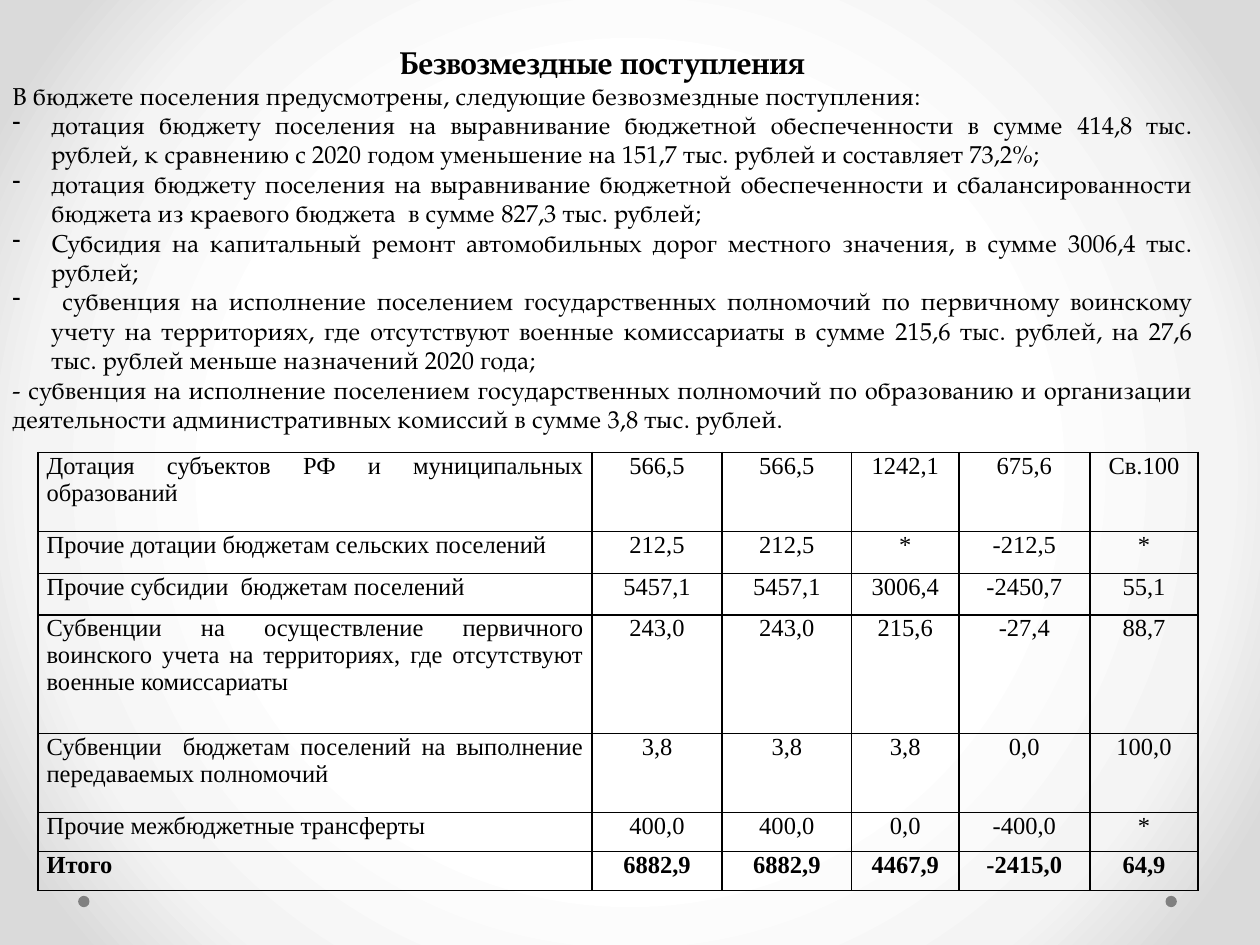
from lxml.etree import SubElement
from pptx import Presentation
from pptx.dml.color import RGBColor
from pptx.enum.shapes import MSO_SHAPE
from pptx.enum.text import MSO_AUTO_SIZE, PP_ALIGN
from pptx.oxml import parse_xml
from pptx.oxml.ns import nsdecls, qn
from pptx.util import Inches, Pt

SERIF = "TeX Gyre Pagella"
ROMAN = "Times New Roman"
TITLE = "Безвозмездные поступления"
INTRO = "В бюджете поселения предусмотрены, следующие безвозмездные поступления:"
ITEMS = [
    "дотация бюджету поселения на выравнивание бюджетной обеспеченности в сумме 414,8 тыс. рублей, "
    "к сравнению с 2020 годом уменьшение на 151,7 тыс. рублей и составляет 73,2%;",
    "дотация бюджету поселения на выравнивание бюджетной обеспеченности и сбалансированности "
    "бюджета из краевого бюджета  в сумме 827,3 тыс. рублей;",
    "Субсидия на капитальный ремонт автомобильных дорог местного значения, в сумме 3006,4 тыс. рублей;",
    " субвенция на исполнение поселением государственных полномочий по первичному воинскому учету "
    "на территориях, где отсутствуют военные комиссариаты в сумме 215,6 тыс. рублей, "
    "на 27,6 тыс. рублей меньше назначений 2020 года;",
]
LAST = (
    "- субвенция на исполнение поселением государственных полномочий по образованию и организации "
    "деятельности административных комиссий в сумме 3,8 тыс. рублей."
)
COLS = [4.4, 1.03, 1.03, 0.85, 1.04, 0.86]
HEIGHTS = [0.63, 0.33, 0.33, 0.94, 0.63, 0.31, 0.31]
ROWS = [
    ["Дотация субъектов РФ и муниципальных образований", "566,5", "566,5", "1242,1", "675,6", "Св.100"],
    ["Прочие дотации бюджетам сельских поселений", "212,5", "212,5", "*", "-212,5", "*"],
    ["Прочие субсидии  бюджетам поселений", "5457,1", "5457,1", "3006,4", "-2450,7", "55,1"],
    ["Субвенции на осуществление первичного воинского учета на территориях, где отсутствуют "
     "военные комиссариаты", "243,0", "243,0", "215,6", "-27,4", "88,7"],
    ["Субвенции  бюджетам поселений на выполнение передаваемых полномочий",
     "3,8", "3,8", "3,8", "0,0", "100,0"],
    ["Прочие межбюджетные трансферты", "400,0", "400,0", "0,0", "-400,0", "*"],
    ["Итого", "6882,9", "6882,9", "4467,9", "-2415,0", "64,9"],
]


def color(code):
    """Turn a hex string into a colour."""
    return RGBColor.from_string(code)


def style(para, text, face, align, size=14, bold=False):
    """Fill a paragraph and set its font and alignment."""
    para.text = text
    para.alignment = align
    font = para.font
    font.name, font.size, font.bold = face, Pt(size), bold
    font.color.rgb = color("000000")


def paint(slide):
    """Give the slide a round gradient background."""
    stops = "".join(
        f'<a:gs pos="{pos}000"><a:srgbClr val="{code}"/></a:gs>'
        for pos, code in [(50, "FFFFFF"), (76, "F4F4F4"), (92, "DADADA")]
    )
    slide.element.cSld.insert(0, parse_xml(
        f'<p:bg {nsdecls("p", "a")}><p:bgPr><a:gradFill rotWithShape="1"><a:gsLst>{stops}</a:gsLst>'
        '<a:path path="circle"><a:fillToRect l="50000" t="50000" r="50000" b="50000"/></a:path>'
        "</a:gradFill><a:effectLst/></p:bgPr></p:bg>"
    ))


def add_dot(slide, left):
    """Draw one grey dot near the bottom edge."""
    dot = slide.shapes.add_shape(
        MSO_SHAPE.OVAL, Inches(left), Inches(7.11), Inches(0.09), Inches(0.09)
    )
    dot.shadow.inherit = False
    dot.fill.solid()
    dot.fill.fore_color.rgb = color("808080")
    dot.line.fill.background()


def add_dash(para):
    """Give a paragraph a hanging dash."""
    props = para._p.get_or_add_pPr()
    props.set("marL", str(Inches(0.31)))
    props.set("indent", str(-Inches(0.31)))
    SubElement(props, qn("a:buFontTx"))
    SubElement(props, qn("a:buChar")).set("char", "-")


def add_body(slide):
    """Add the title and the list of receipts."""
    box = slide.shapes.add_textbox(Inches(0), Inches(0.29), Inches(9.8), Inches(3.23))
    frame = box.text_frame
    frame.word_wrap = True
    frame.auto_size = MSO_AUTO_SIZE.SHAPE_TO_FIT_TEXT
    head = frame.paragraphs[0]
    head._p.get_or_add_pPr().set("marR", str(Inches(0.24)))
    style(head, TITLE, SERIF, PP_ALIGN.CENTER, 18, True)
    for text in [INTRO, *ITEMS, LAST]:
        para = frame.add_paragraph()
        if text in ITEMS:
            add_dash(para)
        style(para, text, SERIF, PP_ALIGN.JUSTIFY)


def add_edges(cell):
    """Draw thin black borders around a cell."""
    props = cell._tc.get_or_add_tcPr()
    for side in "LRTB":
        props.append(parse_xml(
            f'<a:ln{side} {nsdecls("a")} w="{Pt(1)}"><a:solidFill><a:srgbClr val="000000"/>'
            f"</a:solidFill></a:ln{side}>"
        ))


def add_grid(slide):
    """Add the table of receipts."""
    table = slide.shapes.add_table(
        len(ROWS), len(COLS), Inches(0.3), Inches(3.59), Inches(sum(COLS)), Inches(sum(HEIGHTS))
    ).table
    table.first_row = table.horz_banding = False
    for col, width in zip(table.columns, COLS):
        col.width = Inches(width)
    for row, height, texts in zip(table.rows, HEIGHTS, ROWS):
        row.height = Inches(height)
        for num, (cell, text) in enumerate(zip(row.cells, texts)):
            cell.margin_left = cell.margin_right = Inches(0.07)
            cell.margin_top = cell.margin_bottom = 0
            add_edges(cell)
            cell.fill.background()
            align = PP_ALIGN.CENTER if num else PP_ALIGN.JUSTIFY
            style(cell.text_frame.paragraphs[0], text, ROMAN, align, bold=texts is ROWS[-1])


def main():
    """Build and save the slide."""
    deck = Presentation()
    deck.slide_width, deck.slide_height = Inches(10), Inches(7.5)
    slide = deck.slides.add_slide(deck.slide_layouts[6])
    paint(slide)
    for left in (9.25, 0.62):
        add_dot(slide, left)
    add_body(slide)
    add_grid(slide)
    deck.save("out.pptx")


if __name__ == "__main__":
    main()
